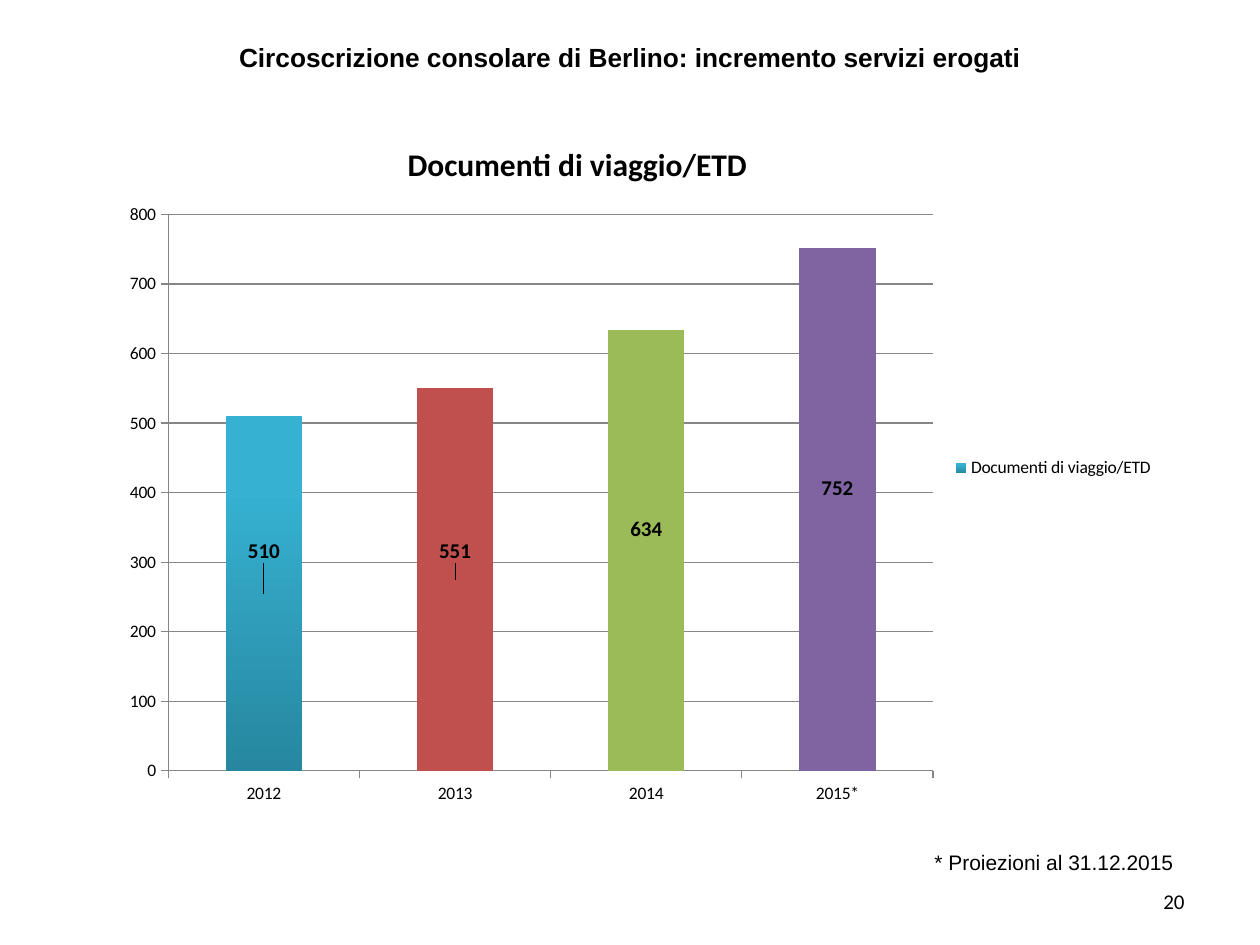
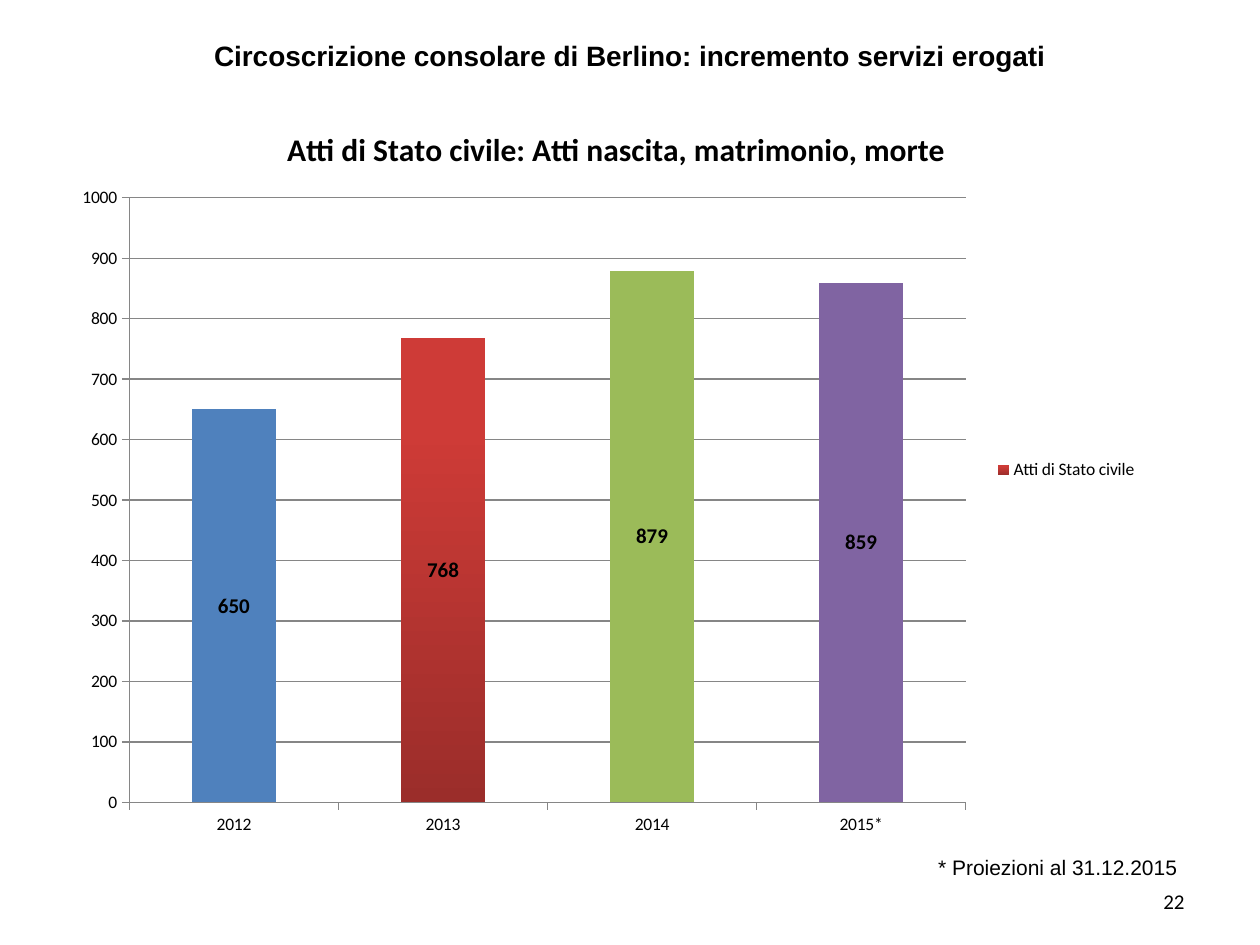
from lxml import etree
from pptx import Presentation, util as u
from pptx.chart.data import CategoryChartData
from pptx.dml.color import RGBColor
from pptx.enum import chart as ch, text as tx
from pptx.oxml.ns import qn

COLS, ROWS = 100, 75
CELL = u.Inches(0.1)
HUES = {"ink": "000000", "grid": "868686", "blue": "4F81BD", "red": "C0504D",
        "green": "9BBB59", "violet": "8064A2", "teal low": "2787A0",
        "teal top": "36B1D2", "ruby low": "9B2D2A", "ruby top": "CE3B37"}
TITLE = {"name": "Arial", "bold": True}
NOTE = {"name": "Arial", "size": u.Pt(12)}
PAGE = {"name": "Calibri", "size": u.Pt(12)}
BASE = {"name": "Calibri", "size": u.Pt(10)}
HEAD = {"name": "Calibri", "size": u.Pt(18), "bold": True}
LABEL = {"name": "Calibri", "size": u.Pt(12), "bold": True}
YEARS = ["2012", "2013", "2014", "2015*"]


def hue(name):
    return RGBColor.from_string(HUES[name])


def put(item, form):
    for key, value in form.items():
        setattr(item, key, value)


def ink(font, form):
    put(font, form)
    font.color.rgb = hue("ink")


def area(box):
    """Turn grid columns and rows into lengths."""
    return [round(n * CELL) for n in box]


def write(slide, box, words, form, align, anchor=tx.MSO_ANCHOR.TOP):
    frame = slide.shapes.add_textbox(*area(box)).text_frame
    put(frame, {"word_wrap": True, "vertical_anchor": anchor})
    para = frame.paragraphs[0]
    para.alignment = align
    run = para.add_run()
    run.text = words
    ink(run.font, form)


def lay(node, index, **parts):
    """Give a chart part a manual layout, in shares of the chart."""
    for old in node.findall(qn("c:layout")):
        node.remove(old)
    outer = etree.Element(qn("c:layout"))
    inner = etree.SubElement(outer, qn("c:manualLayout"))
    for tag, value in parts.items():
        etree.SubElement(inner, qn("c:" + tag)).set("val", str(value))
    node.insert(index, outer)


def shade(fill, low, top):
    fill.gradient()
    fill.gradient_angle = 90
    for stop, name, place in zip(fill.gradient_stops, (low, top), (0, 0.8)):
        stop.color.rgb = hue(name)
        stop.position = place


def axes(chart, top):
    put(chart.value_axis, {"minimum_scale": 0, "maximum_scale": top,
                           "major_unit": 100, "has_major_gridlines": True})
    lines = [chart.value_axis.major_gridlines.format.line]
    for axis in (chart.category_axis, chart.value_axis):
        axis.major_tick_mark = ch.XL_TICK_MARK.OUTSIDE
        ink(axis.tick_labels.font, BASE)
        lines.append(axis.format.line)
    for line in lines:
        line.color.rgb = hue("grid")
        line.width = u.Pt(0.75)


def bars(series, data):
    shade(series.format.fill, *data["shade"])
    for index, name in data["points"].items():
        fill = series.points[index].format.fill
        fill.solid()
        fill.fore_color.rgb = hue(name)
    labels = series.data_labels
    put(labels, {"show_value": True, "position": ch.XL_LABEL_POSITION.CENTER})
    ink(labels.font, LABEL)
    for index, (x, y) in enumerate(data.get("shifts", [])):
        label = series.points[index].data_label
        label.position = ch.XL_LABEL_POSITION.CENTER
        ink(label.font, LABEL)
        node = series.data_labels._element.findall(qn("c:dLbl"))[index]
        lay(node, 1, x=x, y=y)


def graph(slide, box, data):
    source = CategoryChartData()
    source.categories = YEARS
    source.add_series(data["name"], data["values"])
    chart = slide.shapes.add_chart(data["kind"], *area(box), source).chart
    ink(chart.font, BASE)
    put(chart, {"has_title": True, "has_legend": True})
    title = chart.chart_title
    title.text_frame.text = data["head"]
    ink(title.text_frame.paragraphs[0].runs[0].font, HEAD)
    x, y = data["spot"]
    lay(title._element, 1, xMode="edge", yMode="edge", x=x, y=y)
    put(chart.legend, {"position": ch.XL_LEGEND_POSITION.RIGHT,
                       "include_in_layout": False})
    ink(chart.legend.font, BASE)
    plot = chart.plots[0]
    put(plot, {"gap_width": 150, "overlap": data["overlap"],
               "vary_by_categories": False})
    axes(chart, data["top"])
    bars(plot.series[0], data)
    x, y, w, h = data["plot"]
    lay(chart._chartSpace.chart.plotArea, 0, layoutTarget="inner",
        xMode="edge", yMode="edge", x=x, y=y, w=w, h=h)


def page(deck, data):
    slide = deck.slides.add_slide(deck.slide_layouts[6])
    mid, right = tx.PP_ALIGN.CENTER, tx.PP_ALIGN.RIGHT
    write(slide, (1.2, data["rise"], 97.6, 3.6),
          "Circoscrizione consolare di Berlino: incremento servizi erogati",
          TITLE | {"size": u.Pt(data["size"])}, mid)
    write(slide, data["note"], "* Proiezioni al 31.12.2015", NOTE, mid)
    write(slide, (71.7, 69.5, 23.3, 4), data["number"], PAGE, right,
          tx.MSO_ANCHOR.MIDDLE)
    graph(slide, data["box"], data)


TRAVEL = {
    "number": "20", "size": 15, "rise": 2.8, "note": (72.9, 66.9, 21.5, 3),
    "box": (8.3, 9.2, 84.3, 55.9), "kind": ch.XL_CHART_TYPE.COLUMN_CLUSTERED,
    "overlap": 0, "top": 800, "head": "Documenti di viaggio/ETD",
    "name": "Documenti di viaggio/ETD", "values": [510, 551, 634, 752],
    "spot": (0.28, 0.03), "plot": (0.06, 0.14, 0.72, 0.79),
    "shade": ("teal low", "teal top"),
    "points": {1: "red", 2: "green", 3: "violet"},
    "shifts": [(0, -0.06), (0, -0.04), (0, -0.03), (0, -0.03)],
}
CIVIL = {
    "number": "22", "size": 16, "rise": 2.6, "note": (73.2, 67.3, 21.5, 3),
    "box": (5.1, 7.3, 86.2, 60), "kind": ch.XL_CHART_TYPE.COLUMN_STACKED,
    "overlap": 100, "top": 1000,
    "head": "Atti di Stato civile: Atti nascita, matrimonio, morte",
    "name": "Atti di Stato civile", "values": [650, 768, 879, 859],
    "spot": (0.2, 0.04), "plot": (0.06, 0.14, 0.77, 0.8),
    "shade": ("ruby low", "ruby top"),
    "points": {0: "blue", 2: "green", 3: "violet"},
}


def main():
    deck = Presentation()
    put(deck, {"slide_width": COLS * CELL, "slide_height": ROWS * CELL})
    for data in (TRAVEL, CIVIL):
        page(deck, data)
    deck.save("out.pptx")


if __name__ == "__main__":
    main()
